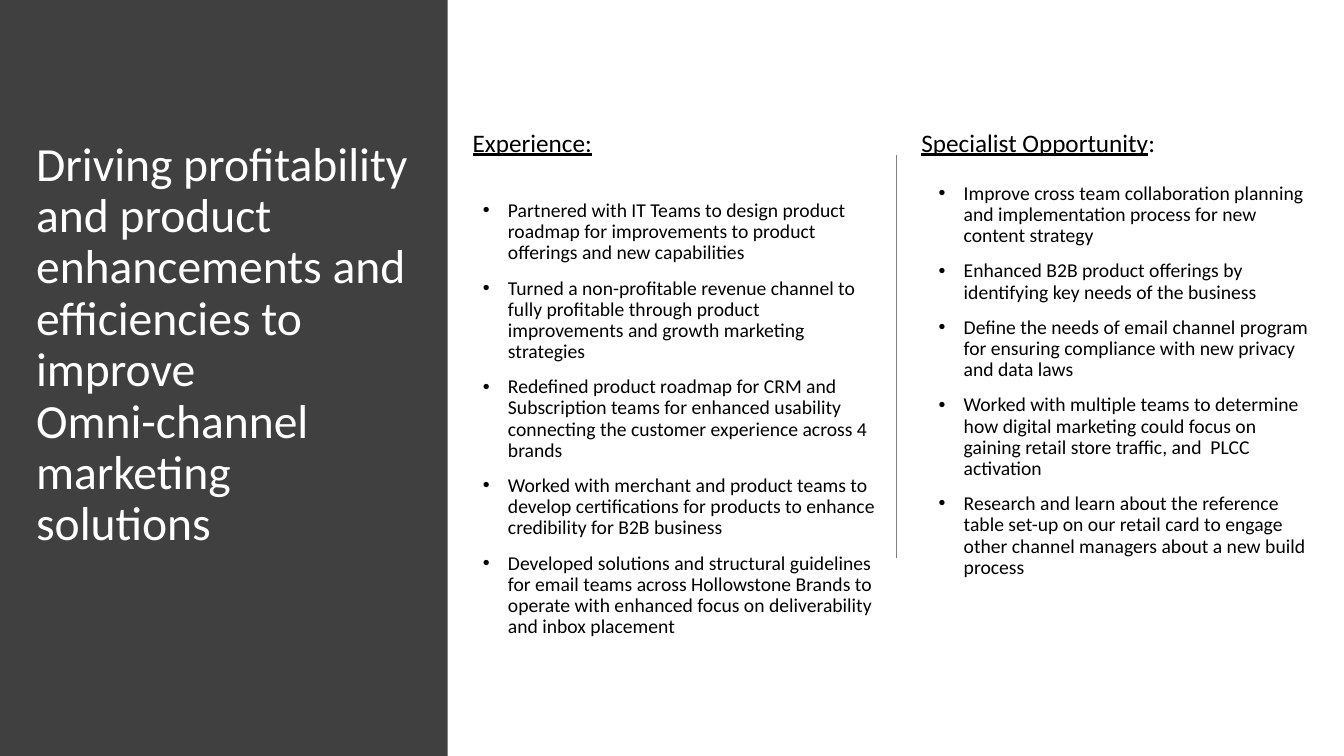
import dataclasses

import lxml.etree
import pptx
import pptx.dml.color
import pptx.enum.shapes
import pptx.enum.text
import pptx.oxml.ns
import pptx.util

Inches = pptx.util.Inches
Pt = pptx.util.Pt
qn = pptx.oxml.ns.qn


@dataclasses.dataclass(frozen=True)
class Theme:
    font: str = "Calibri"
    panel: str = "404040"
    rule: str = "808080"
    light: str = "FFFFFF"
    dark: str = "000000"
    title_size: int = 34
    heading_size: int = 18
    body_size: int = 14
    line_spacing: float = 0.9
    bullet_gap: int = 10
    bullet_indent: float = 0.25


class SlideBuilder:
    """Draws styled elements on the current slide."""

    def __init__(self, s, theme):
        self.s = s
        self.theme = theme

    def rgb(self, color):
        return pptx.dml.color.RGBColor.from_string(color)

    def panel(self, x, y, w, h):
        sp = self.s.shapes.add_shape(
            pptx.enum.shapes.MSO_SHAPE.RECTANGLE,
            Inches(x), Inches(y), Inches(w), Inches(h))
        sp.shadow.inherit = False
        sp.fill.solid()
        sp.fill.fore_color.rgb = self.rgb(self.theme.panel)
        sp.line.fill.background()

    def divider(self, x, top, bottom):
        line = self.s.shapes.add_connector(
            pptx.enum.shapes.MSO_CONNECTOR.STRAIGHT,
            Inches(x), Inches(top), Inches(x), Inches(bottom))
        line.line.color.rgb = self.rgb(self.theme.rule)
        line.line.width = Pt(1)
        sp_pr = line._element.find(qn("p:spPr"))
        lxml.etree.SubElement(sp_pr, qn("a:effectLst"))

    def frame(self, x, y, w, h):
        tf = self.s.shapes.add_textbox(
            Inches(x), Inches(y), Inches(w), Inches(h)).text_frame
        tf.word_wrap = True
        return tf

    def run(self, p, text, size, color, underline=False):
        r = p.add_run()
        r.text = text
        r.font.name = self.theme.font
        r.font.size = Pt(size)
        r.font.color.rgb = self.rgb(color)
        r.font.underline = underline

    def title(self, x, y, w, h, lines):
        p = self.frame(x, y, w, h).paragraphs[0]
        p.line_spacing = self.theme.line_spacing
        for i, line in enumerate(lines):
            if i:
                p.add_line_break()
            self.run(p, line, self.theme.title_size, self.theme.light)

    def heading(self, x, y, w, h, runs):
        tf = self.frame(x, y, w, h)
        tf.auto_size = pptx.enum.text.MSO_AUTO_SIZE.SHAPE_TO_FIT_TEXT
        for text, underline in runs:
            self.run(tf.paragraphs[0], text, self.theme.heading_size,
                     self.theme.dark, underline)

    def bullets(self, x, y, w, h, items):
        tf = self.frame(x, y, w, h)
        indent = Inches(self.theme.bullet_indent)
        for i, item in enumerate(items):
            p = tf.add_paragraph() if i else tf.paragraphs[0]
            p_pr = p._p.get_or_add_pPr()
            p_pr.set("marL", str(indent))
            p_pr.set("indent", str(-indent))
            lxml.etree.SubElement(p_pr, qn("a:buFont")).set("typeface", "Arial")
            lxml.etree.SubElement(p_pr, qn("a:buChar")).set("char", "•")
            p.line_spacing = self.theme.line_spacing
            p.space_before = Pt(self.theme.bullet_gap if i else 0)
            self.run(p, item, self.theme.body_size, self.theme.dark)


EXPERIENCE = [
    "Partnered with IT Teams to design product roadmap for improvements to "
    "product offerings and new capabilities",
    "Turned a non-profitable revenue channel to fully profitable through "
    "product improvements and growth marketing strategies",
    "Redefined product roadmap for CRM and Subscription teams for enhanced "
    "usability connecting the customer experience across 4 brands",
    "Worked with merchant and product teams to develop certifications for "
    "products to enhance credibility for B2B business",
    "Developed solutions and structural guidelines for email teams across "
    "Hollowstone Brands to operate with enhanced focus on deliverability and "
    "inbox placement",
]
OPPORTUNITY = [
    "Improve cross team collaboration planning and implementation process for "
    "new content strategy",
    "Enhanced B2B product offerings by identifying key needs of the business",
    "Define the needs of email channel program for ensuring compliance with "
    "new privacy and data laws",
    "Worked with multiple teams to determine how digital marketing could focus "
    "on gaining retail store traffic, and  PLCC activation",
    "Research and learn about the reference table set-up on our retail card to "
    "engage other channel managers about a new build process",
]


def main():
    prs = pptx.Presentation()
    prs.slide_width = Inches(13.33)
    prs.slide_height = Inches(7.5)
    s = prs.slides.add_slide(prs.slide_layouts[6])
    b = SlideBuilder(s, Theme())

    b.panel(0, 0, 4.44, 7.5)
    b.title(0.26, 1.34, 3.92, 5.13, [
        "Driving profitability and product enhancements and efficiencies to improve",
        "Omni-channel",
        "marketing solutions",
    ])
    b.bullets(4.69, 1.94, 4.13, 4.9, EXPERIENCE)
    b.divider(8.89, 1.54, 5.54)
    b.bullets(9.21, 1.77, 3.95, 4.77, OPPORTUNITY)
    b.heading(4.59, 1.21, 2.66, 0.4, [("Experience:", True)])
    b.heading(9.04, 1.21, 2.66, 0.4,
              [("Specialist Opportunity", True), (":", False)])
    prs.save("out.pptx")


if __name__ == "__main__":
    main()
